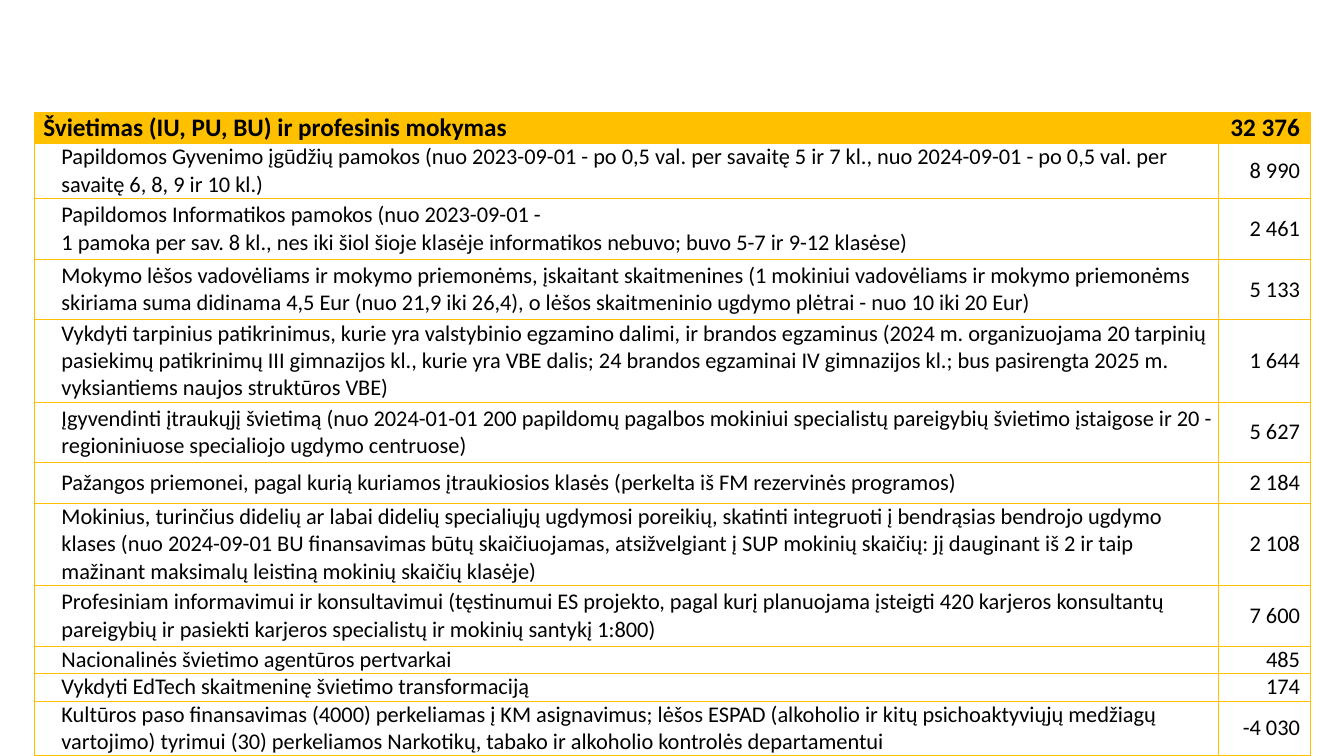
from lxml.etree import SubElement
from pptx import Presentation
from pptx.dml.color import RGBColor
from pptx.enum.text import MSO_ANCHOR, PP_ALIGN
from pptx.oxml.ns import qn
from pptx.util import Cm, Pt

GOLD = RGBColor(0xFF, 0xC0, 0x00)
BLACK = RGBColor(0x00, 0x00, 0x00)
FONT = "Calibri"
WIDTHS = (29.85, 2.31)
UNIT = 0.51

ROWS = [
    (1, "Švietimas (IU, PU, BU) ir profesinis mokymas", "32 376"),
    (2, "Papildomos Gyvenimo įgūdžių pamokos (nuo 2023-09-01 - po 0,5 val. per savaitę 5 ir 7 kl., "
        "nuo 2024-09-01 - po 0,5 val. per savaitę 6, 8, 9 ir 10 kl.)", "8 990"),
    (3, "Papildomos Informatikos pamokos (nuo 2023-09-01 -\n"
        "1 pamoka per sav. 8 kl., nes iki šiol šioje klasėje informatikos nebuvo; "
        "buvo 5-7 ir 9-12 klasėse)", "2 461"),
    (3, "Mokymo lėšos vadovėliams ir mokymo priemonėms, įskaitant skaitmenines (1 mokiniui vadovėliams "
        "ir mokymo priemonėms skiriama suma didinama 4,5 Eur (nuo 21,9 iki 26,4), o lėšos skaitmeninio "
        "ugdymo plėtrai - nuo 10 iki 20 Eur)", "5 133"),
    (4, "Vykdyti tarpinius patikrinimus, kurie yra valstybinio egzamino dalimi, ir brandos egzaminus "
        "(2024 m. organizuojama 20 tarpinių pasiekimų patikrinimų III gimnazijos kl., kurie yra VBE dalis; "
        "24 brandos egzaminai IV gimnazijos kl.; bus pasirengta 2025 m. vyksiantiems naujos struktūros VBE)",
     "1 644"),
    (3, "Įgyvendinti įtraukųjį švietimą (nuo 2024-01-01 200 papildomų pagalbos mokiniui specialistų "
        "pareigybių švietimo įstaigose ir 20 - regioniniuose specialiojo ugdymo centruose)", "5 627"),
    (2, "Pažangos priemonei, pagal kurią kuriamos įtraukiosios klasės "
        "(perkelta iš FM rezervinės programos)", "2 184"),
    (4, "Mokinius, turinčius didelių ar labai didelių specialiųjų ugdymosi poreikių, skatinti integruoti "
        "į bendrąsias bendrojo ugdymo klases (nuo 2024-09-01 BU finansavimas būtų skaičiuojamas, "
        "atsižvelgiant į SUP mokinių skaičių: jį dauginant iš 2 ir taip mažinant maksimalų leistiną "
        "mokinių skaičių klasėje)", "2 108"),
    (3, "Profesiniam informavimui ir konsultavimui (tęstinumui ES projekto, pagal kurį planuojama įsteigti "
        "420 karjeros konsultantų pareigybių ir pasiekti karjeros specialistų ir mokinių santykį 1:800)",
     "7 600"),
    (1, "Nacionalinės švietimo agentūros pertvarkai", "485"),
    (1, "Vykdyti EdTech skaitmeninę švietimo transformaciją", "174"),
    (2, "Kultūros paso finansavimas (4000) perkeliamas į KM asignavimus; lėšos ESPAD (alkoholio ir kitų "
        "psichoaktyviųjų medžiagų vartojimo) tyrimui (30) perkeliamos Narkotikų, tabako ir alkoholio "
        "kontrolės departamentui", "-4 030"),
]


def set_edges(cell):
    """Draw thin gold lines on all four sides of a cell."""
    props = cell._tc.get_or_add_tcPr()
    for side in ("lnL", "lnR", "lnT", "lnB"):
        line = SubElement(props, qn(f"a:{side}"), w=str(Pt(0.5)))
        fill = SubElement(line, qn("a:solidFill"))
        SubElement(fill, qn("a:srgbClr"), val=str(GOLD))


def set_text(cell, text, head, align):
    """Write the text of a cell run by run."""
    para = cell.text_frame.paragraphs[0]
    para.alignment = align
    for index, part in enumerate(text.split("\n")):
        if index:
            para.add_line_break()
        run = para.add_run()
        run.text = part
        font = run.font
        font.name = FONT
        font.size = Pt(18 if head else 16)
        font.bold = head
        font.color.rgb = BLACK


def set_cell(cell, text, head, left, right, align):
    """Format and fill one cell."""
    cell.vertical_anchor = MSO_ANCHOR.MIDDLE
    cell.margin_left, cell.margin_right = Cm(left), Cm(right)
    cell.margin_top = cell.margin_bottom = Cm(0)
    set_edges(cell)
    if head:
        cell.fill.solid()
        cell.fill.fore_color.rgb = GOLD
    else:
        cell.fill.background()
    set_text(cell, text, head, align)


def add_grid(slide):
    """Add the funding table."""
    high = sum(units for units, _, _ in ROWS) * UNIT
    frame = slide.shapes.add_table(
        len(ROWS), len(WIDTHS), Cm(0.86), Cm(2.84), Cm(sum(WIDTHS)), Cm(high))
    table = frame.table
    table.first_row = table.horz_banding = False
    for column, width in zip(table.columns, WIDTHS):
        column.width = Cm(width)
    for index, (units, label, amount) in enumerate(ROWS):
        head = index == 0
        table.rows[index].height = Cm(units * UNIT)
        set_cell(table.cell(index, 0), label, head, 0.23 if head else 0.69, 0, PP_ALIGN.LEFT)
        set_cell(table.cell(index, 1), amount, head, 0, 0.26, PP_ALIGN.RIGHT)


def main():
    """Build and save the slide."""
    deck = Presentation()
    deck.slide_width, deck.slide_height = Cm(33.87), Cm(19.05)
    add_grid(deck.slides.add_slide(deck.slide_layouts[6]))
    deck.save("out.pptx")


if __name__ == "__main__":
    main()
